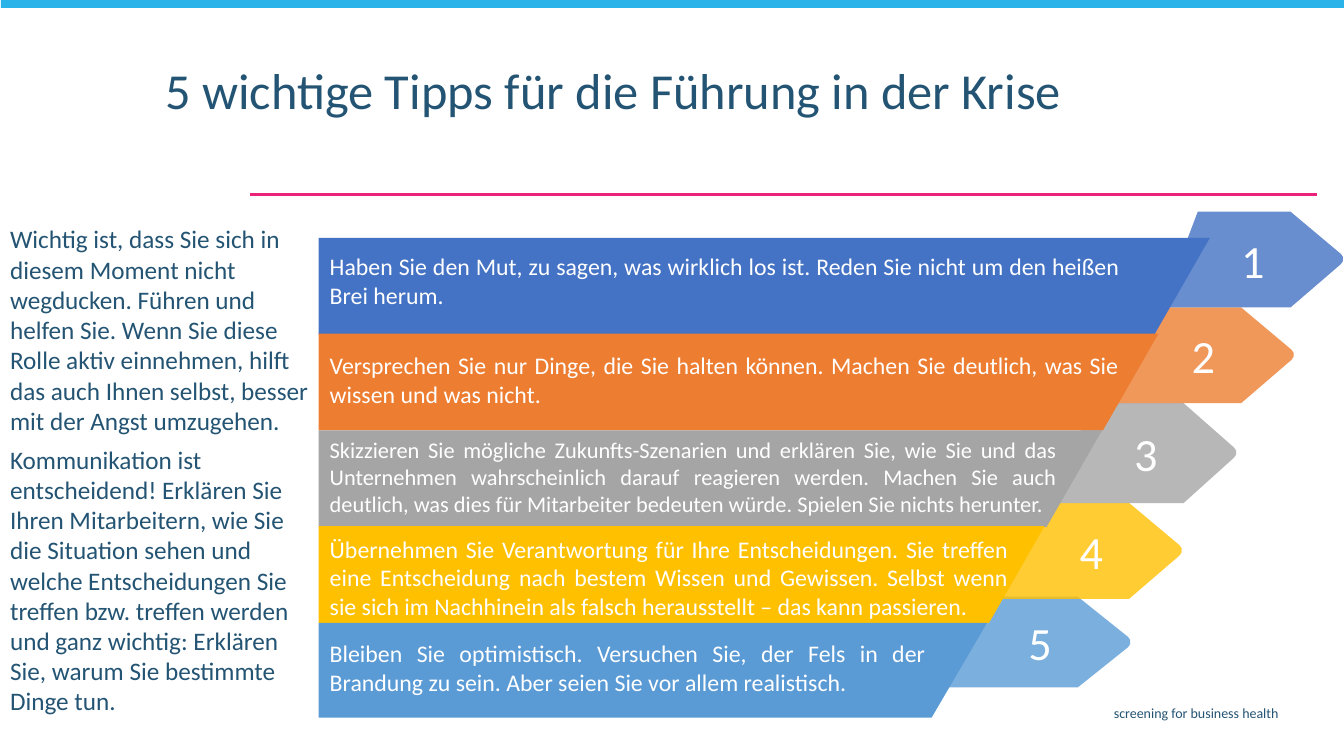
from lxml.etree import SubElement
from pptx import Presentation
from pptx.dml.color import RGBColor
from pptx.enum.shapes import MSO_CONNECTOR, MSO_SHAPE
from pptx.enum.text import MSO_ANCHOR, MSO_AUTO_SIZE, PP_ALIGN
from pptx.oxml.ns import qn
from pptx.util import Pt

PX = 9144
COLORS = {
    "navy": "245473", "sky": "29B3E8", "pink": "EC2179", "white": "FFFFFF",
    "blue": "4472C4", "orange": "ED7D31", "gray": "A5A5A5",
    "gold": "FFC000", "aqua": "5B9BD5",
}
LEFT = 316
SLANT = 55

INTRO = [
    "Wichtig ist, dass Sie sich in diesem Moment nicht wegducken. Führen und "
    "helfen Sie. Wenn Sie diese Rolle aktiv einnehmen, hilft das auch Ihnen "
    "selbst, besser mit der Angst umzugehen.",
    "Kommunikation ist entscheidend! Erklären Sie Ihren Mitarbeitern, wie Sie "
    "die Situation sehen und welche Entscheidungen Sie treffen bzw. treffen "
    "werden und ganz wichtig: Erklären Sie, warum Sie bestimmte Dinge tun.",
]

# color, bar (top, right, height), arrow (left, top, height), text (top, width, height, size), tip
TIPS = [
    ("blue", (236, 1200, 96), (1152, 210, 95), (246, 792, 66, 17),
     "Haben Sie den Mut, zu sagen, was wirklich los ist. Reden Sie nicht um "
     "den heißen Brei herum."),
    ("orange", (331, 1149, 96), (1103, 305, 95), (344, 791, 66, 17),
     "Versprechen Sie nur Dinge, die Sie halten können. Machen Sie deutlich, "
     "was Sie wissen und was nicht."),
    ("gray", (427, 1093, 96), (1046, 400, 99), (429, 729, 90, 16),
     "Skizzieren Sie mögliche Zukunfts-Szenarien und erklären Sie, wie Sie und "
     "das Unternehmen wahrscheinlich darauf reagieren werden. Machen Sie auch "
     "deutlich, was dies für Mitarbeiter bedeuten würde. Spielen Sie nichts "
     "herunter."),
    ("gold", (522, 1036, 96), (992, 499, 95), (526, 681, 95, 17),
     "Übernehmen Sie Verantwortung für Ihre Entscheidungen. Sie treffen eine "
     "Entscheidung nach bestem Wissen und Gewissen. Selbst wenn sie sich im "
     "Nachhinein als falsch herausstellt – das kann passieren."),
    ("aqua", (618, 979, 94), (941, 592, 90), (630, 599, 66, 17),
     "Bleiben Sie optimistisch. Versuchen Sie, der Fels in der Brandung zu "
     "sein. Aber seien Sie vor allem realistisch."),
]


class Deck:
    font = "Calibri"

    def __init__(self):
        self.prs = Presentation()
        self.prs.slide_width = 1333 * PX
        self.prs.slide_height = 750 * PX
        self.slide = self.prs.slides.add_slide(self.prs.slide_layouts[6])
        self.shapes = self.slide.shapes

    def color(self, name):
        return RGBColor.from_string(COLORS[name])

    def paint(self, shape, color, alpha=100):
        shape.shadow.inherit = False
        shape.line.fill.background()
        shape.fill.solid()
        shape.fill.fore_color.rgb = self.color(color)
        if alpha < 100:
            tone = shape.fill._xPr.find(qn("a:solidFill"))[0]
            SubElement(tone, qn("a:alpha")).set("val", str(alpha * 1000))

    def rect(self, x, y, w, h, color):
        box = self.shapes.add_shape(
            MSO_SHAPE.RECTANGLE, x * PX, y * PX, w * PX, h * PX)
        self.paint(box, color)

    def poly(self, points, color, alpha=100):
        pen = self.shapes.build_freeform(*points[0], scale=PX)
        pen.add_line_segments(points[1:], close=True)
        self.paint(pen.convert_to_shape(), color, alpha)

    def line(self, x1, y1, x2, y2, color, width):
        rule = self.shapes.add_connector(
            MSO_CONNECTOR.STRAIGHT, x1 * PX, y1 * PX, x2 * PX, y2 * PX)
        rule.line.color.rgb = self.color(color)
        rule.line.width = Pt(width)
        SubElement(rule._element.spPr, qn("a:effectLst"))

    def text(self, x, y, w, h, lines, size, color="navy", align=PP_ALIGN.LEFT,
             inset=5, grow=True, wrap=True, anchor=MSO_ANCHOR.TOP,
             before=0, lead=None, track=0):
        box = self.shapes.add_textbox(x * PX, y * PX, w * PX, h * PX)
        frame = box.text_frame
        frame.margin_left = frame.margin_right = inset * PX
        frame.margin_top = frame.margin_bottom = inset * PX
        frame.word_wrap = wrap
        frame.vertical_anchor = anchor
        frame.auto_size = (MSO_AUTO_SIZE.SHAPE_TO_FIT_TEXT if grow
                           else MSO_AUTO_SIZE.NONE)
        for i, line in enumerate(lines):
            para = frame.add_paragraph() if i else frame.paragraphs[0]
            run = para.add_run()
            run.text = line
            para.alignment = align
            if i:
                para.space_before = Pt(before)
            if lead:
                para.line_spacing = lead
            para.font.name = self.font
            para.font.size = Pt(size)
            para.font.color.rgb = self.color(color)
            if track:
                run.font._element.set("spc", str(track))

    def arrow(self, x, y, h, color):
        mid = y + h // 2
        self.poly([(x, y + h), (x + 36, y), (x + 128, y),
                   (x + 178, mid - 5), (x + 180, mid - 2),
                   (x + 180, mid + 2), (x + 178, mid + 5),
                   (x + 128, y + h)], color, 80)

    def bar(self, y, right, h, color):
        self.poly([(LEFT, y), (right, y), (right - SLANT, y + h),
                   (LEFT, y + h)], color)


def main():
    deck = Deck()
    deck.line(1306, 193, 248, 193, "pink", 1.5)
    deck.rect(1, -2, 1334, 10, "sky")
    deck.text(370, 694, 903, 25, ["screening for business health"], 10,
              align=PP_ALIGN.RIGHT)
    deck.text(159, 61, 968, 76,
              ["5 wichtige Tipps für die Führung in der Krise"], 36,
              grow=False, lead=0.9)
    deck.text(6, 218, 305, 502, INTRO, 18, inset=4, before=6)

    for color, _, arrow, _, _ in reversed(TIPS):
        deck.arrow(*arrow, color)
    for color, bar, _, _, _ in TIPS:
        deck.bar(*bar, color)
    for num, (_, _, (x, y, h), (top, wide, high, size), tip) in enumerate(TIPS, 1):
        deck.text(x + 70, y + (h - 55) // 2, 41, 55, [str(num)], 33, "white",
                  PP_ALIGN.CENTER, wrap=False, anchor=MSO_ANCHOR.MIDDLE,
                  track=450)
        deck.text(LEFT + 7, top, wide, high, [tip], size, "white",
                  PP_ALIGN.JUSTIFY, inset=4)

    deck.prs.save("out.pptx")


if __name__ == "__main__":
    main()
